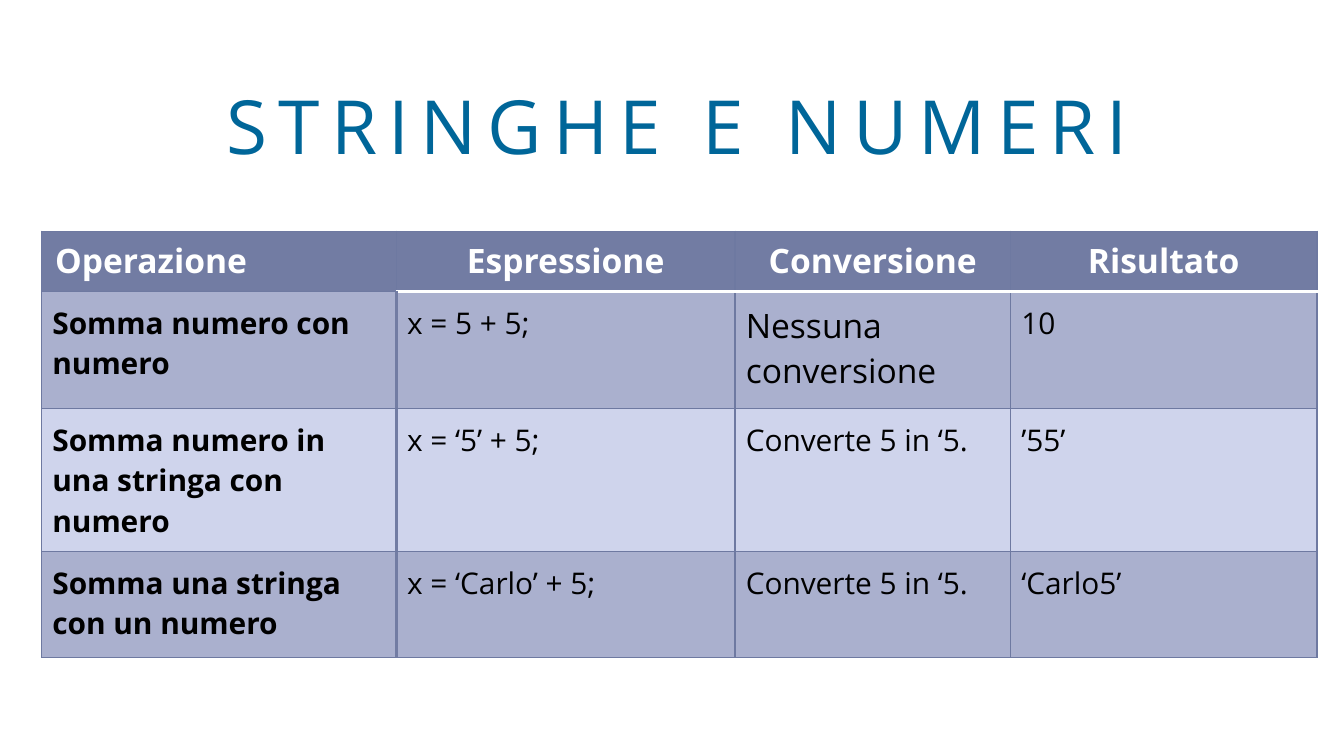
from dataclasses import dataclass

from lxml import etree
from pptx import Presentation
from pptx.dml.color import RGBColor
from pptx.enum.text import MSO_ANCHOR, PP_ALIGN
from pptx.oxml.ns import qn
from pptx.util import Inches, Pt

LEFT, CENTER = PP_ALIGN.LEFT, PP_ALIGN.CENTER
MIDDLE = MSO_ANCHOR.MIDDLE
FONT = "Open Sans"
COLORS = {
    "title": "006699",
    "header": "727CA3",
    "dark_band": "AAB0CE",
    "light_band": "CFD4EC",
    "grid": "6E79A1",
    "white": "FFFFFF",
    "black": "000000",
}


@dataclass(frozen=True)
class Border:
    color: str
    width: float


@dataclass(frozen=True)
class Operation:
    name: str
    expression: str
    conversion: str
    result: str
    conversion_size: int = 16


GRID = Border("grid", 0.75)
HEADER_RULE = Border("white", 2)
NAME_RULE = Border("header", 2)

HEADINGS = ("Operazione", "Espressione", "Conversione", "Risultato")
OPERATIONS = (
    Operation("Somma numero con numero", "x = 5 + 5;", "Nessuna conversione", "10", 18),
    Operation("Somma numero in una stringa con numero", "x = ‘5’ + 5;",
              "Converte 5 in ‘5.", "’55’"),
    Operation("Somma una stringa con un numero", "x = ‘Carlo’ + 5;",
              "Converte 5 in ‘5.", "‘Carlo5’"),
)
COLUMN_WIDTHS = (2.64, 2.52, 2.05, 2.28)
ROW_HEIGHTS = (0.45, 0.87, 0.79, 0.79)


def write_text(frame, text: str, *, size: float, color: str, bold: bool = False,
               align=LEFT, spacing: float = 0) -> None:
    paragraph = frame.paragraphs[0]
    paragraph.alignment = align
    run = paragraph.add_run()
    run.text = text
    run.font.name = FONT
    run.font.size = Pt(size)
    run.font.bold = bold
    run.font.color.rgb = RGBColor.from_string(COLORS[color])
    if spacing:
        run._r.get_or_add_rPr().set("spc", str(int(spacing * 100)))


def style_cell(cell, fill: str, left: Border, right: Border, top: Border,
               bottom: Border) -> None:
    properties = cell._tc.get_or_add_tcPr()
    for side, border in zip("LRTB", (left, right, top, bottom)):
        line = etree.SubElement(properties, qn(f"a:ln{side}"), w=str(Pt(border.width)))
        solid = etree.SubElement(line, qn("a:solidFill"))
        etree.SubElement(solid, qn("a:srgbClr"), val=COLORS[border.color])
    cell.fill.solid()
    cell.fill.fore_color.rgb = RGBColor.from_string(COLORS[fill])


def add_header(table) -> None:
    for column, heading in enumerate(HEADINGS):
        cell = table.cell(0, column)
        style_cell(cell, "header", GRID, GRID, GRID, HEADER_RULE if column else GRID)
        write_text(cell.text_frame, heading, size=18, color="white", bold=True,
                   align=CENTER if column else LEFT)


def add_operation(table, row: int, operation: Operation) -> None:
    texts = (operation.name, operation.expression, operation.conversion, operation.result)
    for column, text in enumerate(texts):
        cell = table.cell(row, column)
        cell.margin_left = cell.margin_right = Inches(0.08)
        cell.margin_top = cell.margin_bottom = Inches(0.08)
        style_cell(
            cell,
            "dark_band" if row % 2 else "light_band",
            left=NAME_RULE if column == 1 else GRID,
            right=NAME_RULE if column == 0 else GRID,
            top=HEADER_RULE if row == 1 and column else GRID,
            bottom=GRID,
        )
        write_text(cell.text_frame, text, color="black", bold=column == 0,
                   size=operation.conversion_size if column == 2 else 16)


def add_operations_table(slide) -> None:
    table = slide.shapes.add_table(
        len(ROW_HEIGHTS), len(COLUMN_WIDTHS), Inches(0.31), Inches(1.72),
        Inches(sum(COLUMN_WIDTHS)), Inches(sum(ROW_HEIGHTS))).table
    table.horz_banding = False
    for column, width in zip(table.columns, COLUMN_WIDTHS):
        column.width = Inches(width)
    for row, height in zip(table.rows, ROW_HEIGHTS):
        row.height = Inches(height)
    add_header(table)
    for row, operation in enumerate(OPERATIONS, start=1):
        add_operation(table, row, operation)


def add_title(slide) -> None:
    title = slide.shapes.title
    title.left, title.top = Inches(0.28), Inches(0.46)
    title.width, title.height = Inches(9.53), Inches(0.94)
    title.text_frame.vertical_anchor = MIDDLE
    write_text(title.text_frame, "STRINGHE E NUMERI", size=40, color="title",
               align=CENTER, spacing=6)


def main() -> None:
    presentation = Presentation()
    presentation.slide_width = Inches(10)
    presentation.slide_height = Inches(10 * 9 / 16)
    slide = presentation.slides.add_slide(presentation.slide_layouts[5])
    add_title(slide)
    add_operations_table(slide)
    presentation.save("out.pptx")


if __name__ == "__main__":
    main()
